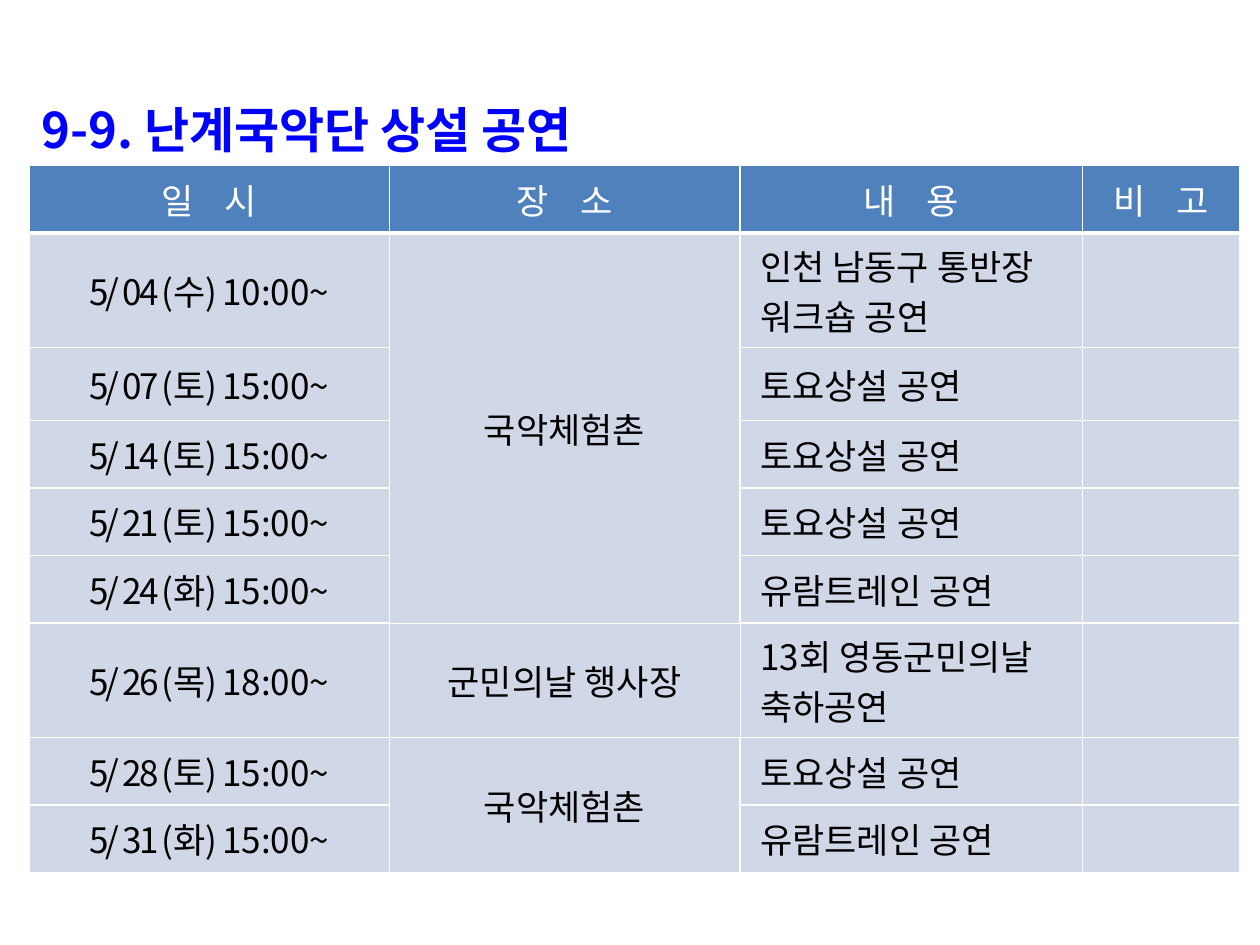
from lxml.etree import SubElement
from pptx import Presentation
from pptx.dml.color import RGBColor
from pptx.enum.text import MSO_ANCHOR as Anchor, PP_ALIGN as Align
from pptx.oxml.ns import qn
from pptx.util import Pt

FONT = "Noto Sans CJK KR"
BLUE = RGBColor(0x00, 0x00, 0xFF)
HEADER_FILL = RGBColor(0x4F, 0x81, 0xBD)
BODY_FILL = RGBColor(0xD0, 0xD8, 0xE8)
WHITE = RGBColor(0xFF, 0xFF, 0xFF)
BLACK = RGBColor(0x00, 0x00, 0x00)

COLUMN_WIDTHS = [205.9, 200.2, 195.8, 90]
ROW_HEIGHTS = [38.6, 65.4, 41.8, 38.6, 38.6, 38.6, 65.4, 38.6, 38.6]
HEADERS = [("일", "시"), ("장", "소"), ("내", "용"), ("비", "고")]
SATURDAY = "토요상설 공연"
TOUR_TRAIN = "유람트레인 공연"
EVENTS = [
    ("5/ 04 (수) ", "10:00~", ["인천 남동구 통반장\v워크숍 공연"]),
    ("5/ 07 (토) ", "15:00~", [SATURDAY]),
    ("5/ 14 (토) ", "15:00~", [SATURDAY]),
    ("5/ 21 (토) ", "15:00~", [SATURDAY]),
    ("5/ 24 (화) ", "15:00~", [TOUR_TRAIN]),
    ("5/ 26 (목) ", "18:00~", ["13회 영동군민의날", "축하공연"]),
    ("5/ 28 (토) ", "15:00~", [SATURDAY]),
    ("5/ 31 (화) ", "15:00~", [TOUR_TRAIN]),
]
VENUES = [(1, 5, "국악체험촌"), (6, 6, "군민의날 행사장"), (7, 8, "국악체험촌")]


def set_all(target, values):
    for name, value in values.items():
        setattr(target, name, value)


def add_text(paragraph, text, color, size=20, bold=False, spacing=0):
    first = len(paragraph.runs)
    for index, line in enumerate(text.split("\v")):
        if index:
            paragraph.add_line_break()
        paragraph.add_run().text = line
    for run in paragraph.runs[first:]:
        set_all(run.font, {"name": FONT, "size": Pt(size), "bold": bold})
        run.font.color.rgb = color
        properties = run.font._element
        SubElement(properties, qn("a:ea")).set("typeface", FONT)
        if spacing:
            properties.set("spc", str(round(spacing * 100)))


def border_widths(row, column):
    def horizontal(edge):
        if edge == 1:
            return 3
        return 0.25 if edge == 2 or (column == 1 and edge in (6, 7)) else 1

    def vertical(edge):
        return 0.25 if row == 6 and edge in (1, 2) else 1

    return {
        "lnL": vertical(column),
        "lnR": vertical(column + 1),
        "lnT": horizontal(row),
        "lnB": horizontal(row + 1),
    }


def style_cell(cell, row, column):
    properties = cell._tc.get_or_add_tcPr()
    for side, width in border_widths(row, column).items():
        line = SubElement(properties, qn(f"a:{side}"), w=str(Pt(width)))
        fill = SubElement(line, qn("a:solidFill"))
        SubElement(fill, qn("a:srgbClr"), val=str(WHITE))
    cell.fill.solid()
    cell.fill.fore_color.rgb = BODY_FILL if row else HEADER_FILL
    cell.vertical_anchor = Anchor.MIDDLE


def add_title(slide, left, top, width, height):
    frame = slide.shapes.add_textbox(Pt(left), Pt(top), Pt(width), Pt(height)).text_frame
    frame.word_wrap = True
    paragraph = frame.paragraphs[0]
    paragraph.line_spacing = 1.4
    add_text(paragraph, "9-9. 난계국악단 상설 공연", BLUE, size=28, bold=True)


def add_schedule(slide, left, top, width, height):
    table = slide.shapes.add_table(
        len(ROW_HEIGHTS), len(COLUMN_WIDTHS), Pt(left), Pt(top), Pt(width), Pt(height)
    ).table
    table.horz_banding = False
    for column, share in zip(table.columns, COLUMN_WIDTHS):
        column.width = Pt(share * width / sum(COLUMN_WIDTHS))
    for row, share in zip(table.rows, ROW_HEIGHTS):
        row.height = Pt(share * height / sum(ROW_HEIGHTS))
    for row in range(len(ROW_HEIGHTS)):
        for column in range(len(COLUMN_WIDTHS)):
            style_cell(table.cell(row, column), row, column)

    def centred(row, column):
        paragraph = table.cell(row, column).text_frame.paragraphs[0]
        paragraph.alignment = Align.CENTER
        return paragraph

    for column, (first, last) in enumerate(HEADERS):
        paragraph = centred(0, column)
        add_text(paragraph, first + " ", WHITE, spacing=6.7)
        add_text(paragraph, last, WHITE)
    for row, (date, time, content) in enumerate(EVENTS, start=1):
        paragraph = centred(row, 0)
        add_text(paragraph, date, BLACK, spacing=-1.5)
        add_text(paragraph, time, BLACK)
        cell = table.cell(row, 2)
        cell.margin_left = Pt(11.7)
        frame = cell.text_frame
        for index, text in enumerate(content):
            paragraph = frame.add_paragraph() if index else frame.paragraphs[0]
            add_text(paragraph, text, BLACK)
    for first, last, venue in VENUES:
        if last > first:
            table.cell(first, 1).merge(table.cell(last, 1))
        add_text(centred(first, 1), venue, BLACK)


def main():
    presentation = Presentation()
    set_all(presentation, {"slide_width": Pt(720), "slide_height": Pt(540)})
    slide = presentation.slides.add_slide(presentation.slide_layouts[6])
    add_title(slide, 16.6, 39.6, 692, 202.3)
    add_schedule(slide, 16.6, 94.5, 692, 404)
    presentation.save("out.pptx")


if __name__ == "__main__":
    main()
